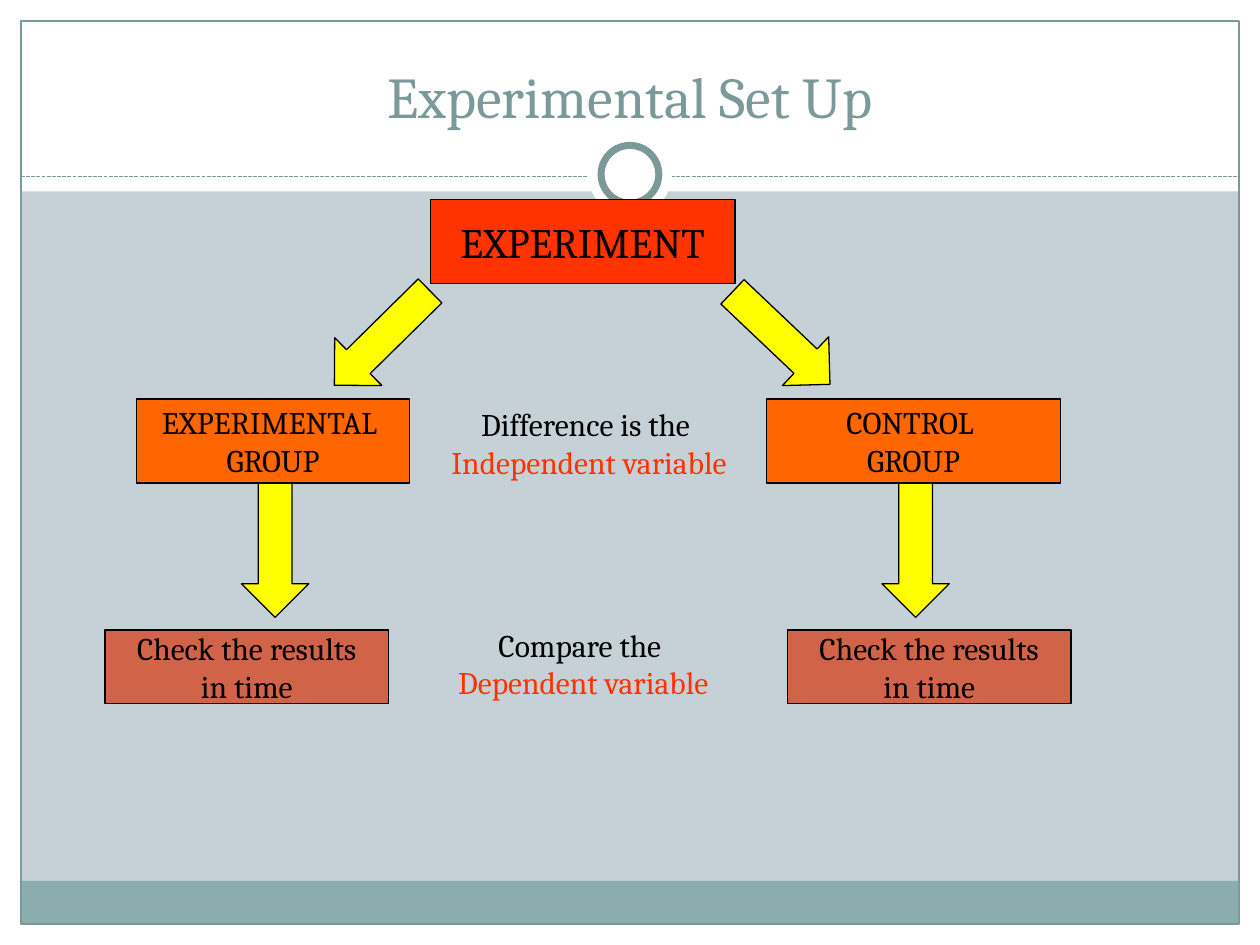
import pptx
import pptx.util
import pptx.dml.color
import pptx.enum.dml
import pptx.enum.shapes
import pptx.enum.text
import pptx.oxml

RGB = pptx.dml.color.RGBColor
KIND = pptx.enum.shapes.MSO_SHAPE
ALIGN = pptx.enum.text.PP_ALIGN
ANCHOR = pptx.enum.text.MSO_ANCHOR

WHITE = RGB(0xFF, 0xFF, 0xFF)
BLACK = RGB(0x00, 0x00, 0x00)
MIST = RGB(0xC5, 0xD1, 0xD7)
TEAL = RGB(0x8C, 0xAD, 0xAE)
SLATE = RGB(0x7C, 0x99, 0x9A)
YELLOW = RGB(0xFF, 0xFF, 0x00)
RED = RGB(0xFF, 0x33, 0x00)
ORANGE = RGB(0xFF, 0x66, 0x00)
BRICK = RGB(0xD1, 0x63, 0x49)
FONT = "Cambria"
COLS, ROWS = 120, 90


def grid(*cells):
    return [pptx.util.Inches(cell / 12) for cell in cells]


def within(box, x, y, w, h):
    return grid(box[0] + x, box[1] + y, w, h)


def draw(page, kind, spot, fill=None, line=None, width=0.75):
    shape = page.shapes.add_shape(kind, *spot)
    shape.shadow.inherit = False
    if fill is None:
        shape.fill.background()
    else:
        shape.fill.solid()
        shape.fill.fore_color.rgb = fill
    if line is None:
        shape.line.fill.background()
    else:
        shape.line.color.rgb = line
        shape.line.width = pptx.util.Pt(width)
    return shape


def write(shape, text, size, *inks):
    frame = shape.text_frame
    frame.text = text
    for i, para in enumerate(frame.paragraphs):
        para.alignment = ALIGN.CENTER
        for run in para.runs:
            run.font.name = FONT
            run.font.size = pptx.util.Pt(size)
            run.font.color.rgb = inks[min(i, len(inks) - 1)]
    return frame


def add_frame(page, box):
    w, h = box[2:]
    bands = [
        (0, h - 2, w, 2, WHITE),
        (0, 0, w, 18.24, WHITE),
        (0, 0, 2, h, WHITE),
        (w - 2, 0, 2, h, WHITE),
        (2, h - 6.1, w - 4, 4.1, TEAL),
    ]
    for *spot, fill in bands:
        draw(page, KIND.RECTANGLE, within(box, *spot), fill)
    draw(page, KIND.RECTANGLE, within(box, 2, 2, w - 4, h - 4), line=SLATE)

    left, top, right, _ = within(box, 2, 16.8, box[0] + w - 2, 0)
    rule = page.shapes.add_connector(
        pptx.enum.shapes.MSO_CONNECTOR.STRAIGHT, left, top, right, top)
    rule.line.color.rgb = SLATE
    rule.line.width = pptx.util.Pt(0.75)
    rule.line.dash_style = pptx.enum.dml.MSO_LINE.SQUARE_DOT
    rule.element.spPr.append(pptx.oxml.parse_xml(
        '<a:effectLst xmlns:a='
        '"http://schemas.openxmlformats.org/drawingml/2006/main"/>'))

    for size, line in ((8, None), (5.5, SLATE)):
        spot = within(box, (w - size) / 2, 16.6 - size / 2, size, size)
        draw(page, KIND.OVAL, spot, WHITE, line, 4)


def add_title(page, box, text):
    title = page.shapes.title
    title.left, title.top, title.width, title.height = grid(*box)
    write(title, text, 33, SLATE).vertical_anchor = ANCHOR.BOTTOM
    title.element.getparent().append(title.element)


def add_chart(page, box):
    arrows = [(70.8, 30.2, 90), (9.8, 30.2, 90), (20, 10, 135.4), (58, 10, 43.5)]
    for x, y, turn in arrows:
        spot = within(box, x, y, 12.8, 6.4)
        arrow = draw(page, KIND.RIGHT_ARROW, spot, YELLOW, BLACK)
        arrow.rotation = turn

    check = "Check the results\nin time"
    cards = [
        (31, 0, 29, 8, RED, "EXPERIMENT", 24),
        (3, 19, 26, 8, ORANGE, "EXPERIMENTAL \nGROUP", 18),
        (63, 19, 28, 8, ORANGE, "CONTROL \nGROUP", 18),
        (0, 41, 27, 7, BRICK, check, 18),
        (65, 41, 27, 7, BRICK, check, 18),
    ]
    for *spot, fill, text, size in cards:
        card = draw(page, KIND.RECTANGLE, within(box, *spot), fill, BLACK)
        frame = write(card, text, size, BLACK)
        frame.vertical_anchor = ANCHOR.MIDDLE
        frame.word_wrap = False

    notes = [
        (30.7, 19, 30.8, 8.5, "Difference is the \nIndependent variable"),
        (31.2, 40, 28.7, 12.1, "Compare the \nDependent variable"),
    ]
    for *spot, text in notes:
        note = page.shapes.add_textbox(*within(box, *spot))
        write(note, text, 18, BLACK, RED).word_wrap = False


def main():
    deck = pptx.Presentation()
    deck.slide_width, deck.slide_height = grid(COLS, ROWS)
    page = deck.slides.add_slide(deck.slide_layouts[5])
    page.background.fill.solid()
    page.background.fill.fore_color.rgb = MIST
    add_frame(page, (0, 0, COLS, ROWS))
    add_title(page, (4, 3, 112, 10), "Experimental Set Up")
    add_chart(page, (10, 19, 92, 52))
    deck.save("out.pptx")


if __name__ == "__main__":
    main()
